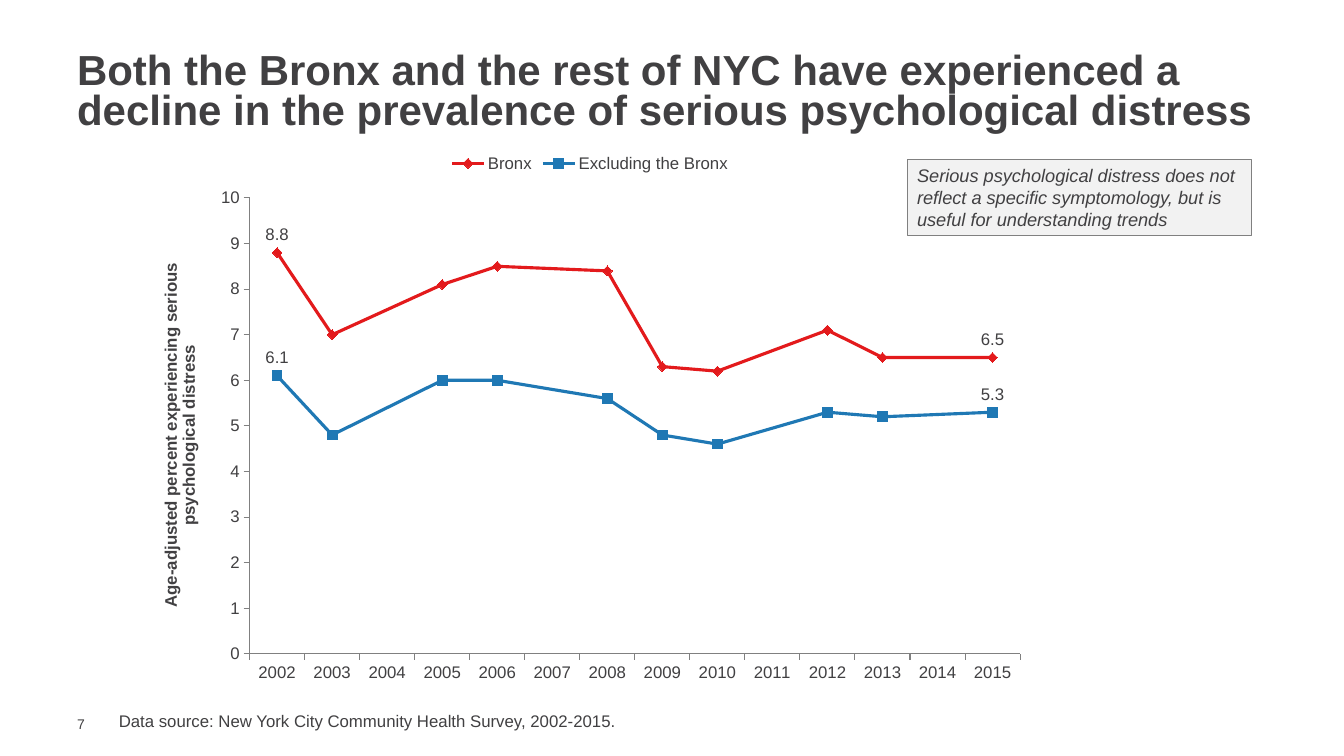
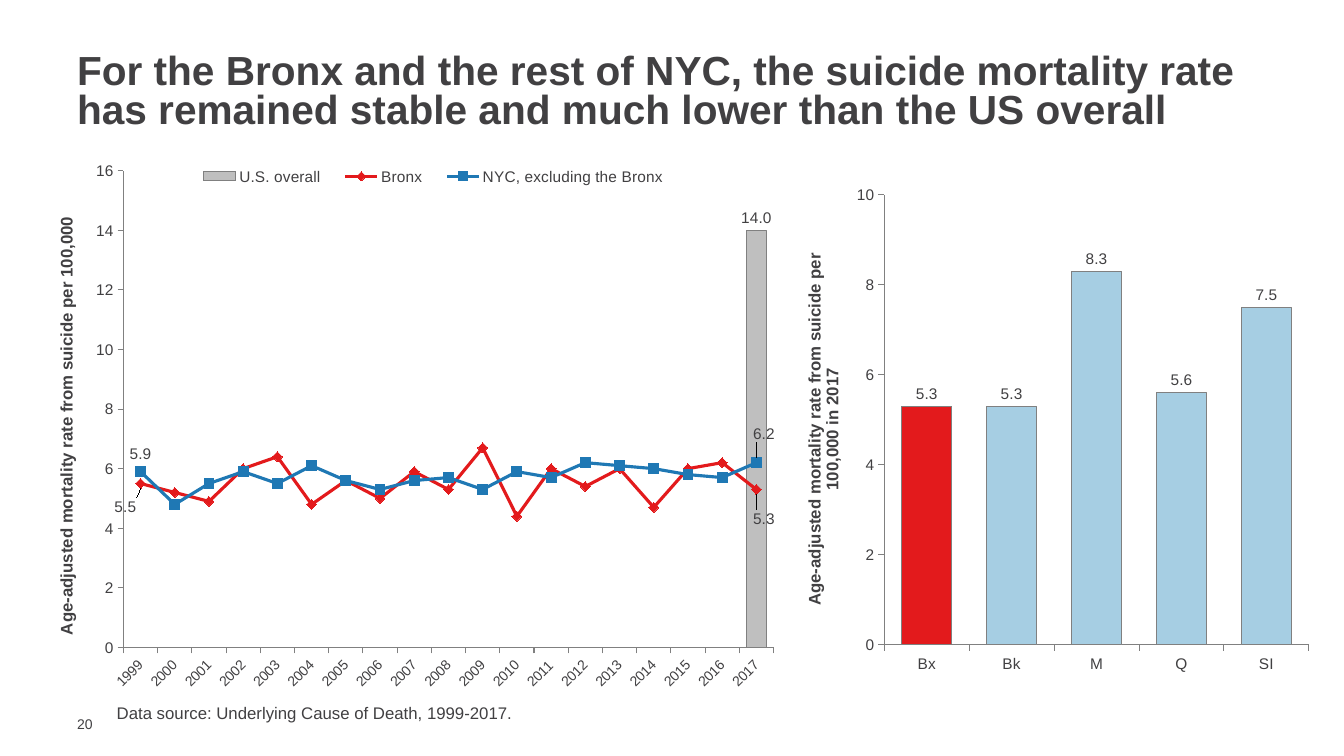
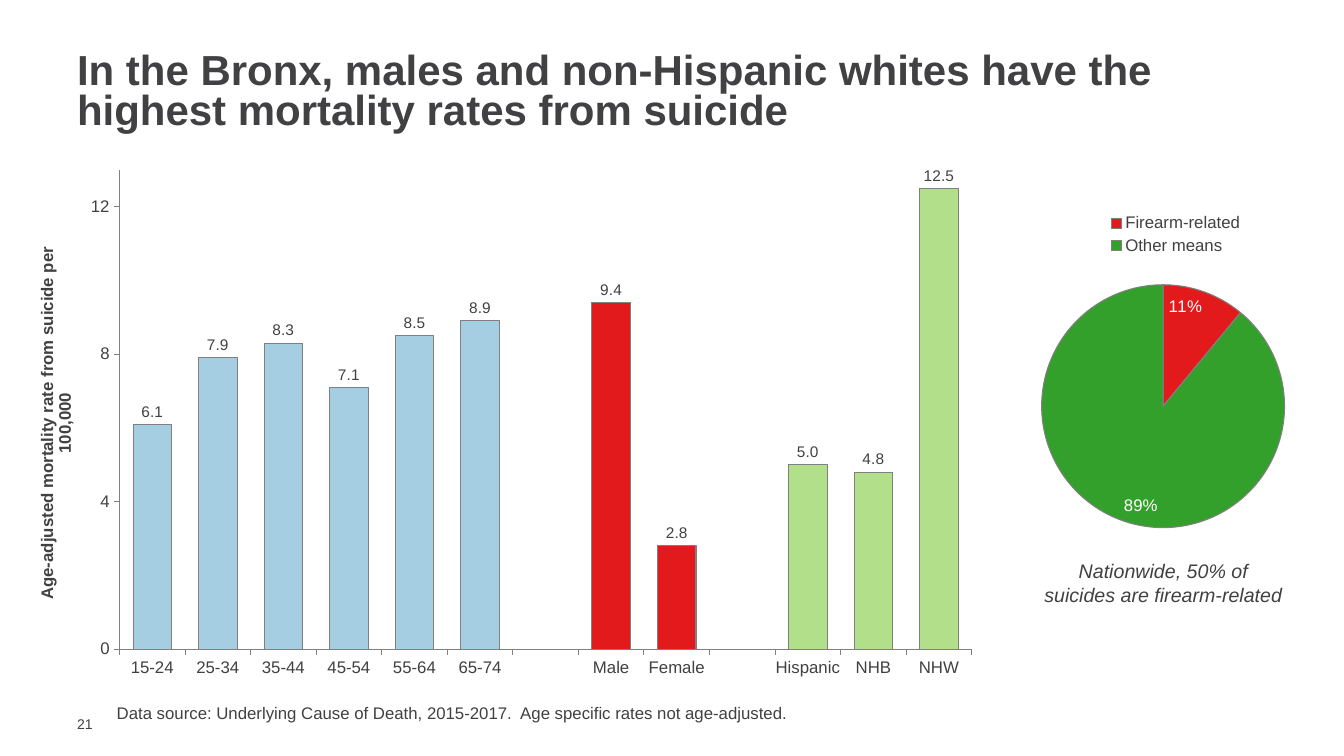
from copy import deepcopy
from dataclasses import dataclass
from typing import NamedTuple

from pptx import Presentation
from pptx.chart.data import CategoryChartData
from pptx.dml.color import RGBColor
from pptx.enum.chart import (XL_CHART_TYPE, XL_LABEL_POSITION, XL_LEGEND_POSITION,
                             XL_MARKER_STYLE, XL_TICK_MARK)
from pptx.enum.shapes import MSO_SHAPE
from pptx.enum.text import MSO_ANCHOR, PP_ALIGN
from pptx.oxml import parse_xml
from pptx.oxml.ns import nsdecls, qn
from pptx.util import Pt

FONT = "Arial"
INK = RGBColor(0x41, 0x40, 0x42)
GRAY = RGBColor(0x80, 0x80, 0x80)
SILVER = RGBColor(0xBF, 0xBF, 0xBF)
PALE_GRAY = RGBColor(0xF2, 0xF2, 0xF2)
WHITE = RGBColor(0xFF, 0xFF, 0xFF)
RED = RGBColor(0xE3, 0x1A, 0x1C)
BLUE = RGBColor(0x1F, 0x78, 0xB4)
LIGHT_BLUE = RGBColor(0xA6, 0xCE, 0xE3)
GREEN = RGBColor(0x33, 0xA0, 0x2C)
LIGHT_GREEN = RGBColor(0xB2, 0xDF, 0x8A)

COLUMNS = XL_CHART_TYPE.COLUMN_CLUSTERED
LINES = XL_CHART_TYPE.LINE_MARKERS
PIE = XL_CHART_TYPE.PIE
ABOVE, BELOW = XL_LABEL_POSITION.ABOVE, XL_LABEL_POSITION.BELOW
OUTSIDE_END, INSIDE_END = XL_LABEL_POSITION.OUTSIDE_END, XL_LABEL_POSITION.INSIDE_END
LEGEND_TOP, LEGEND_RIGHT = XL_LEGEND_POSITION.TOP, XL_LEGEND_POSITION.RIGHT
DIAMOND, SQUARE = XL_MARKER_STYLE.DIAMOND, XL_MARKER_STYLE.SQUARE
TICK_OUT, TICK_NONE = XL_TICK_MARK.OUTSIDE, XL_TICK_MARK.NONE
TOP, MIDDLE = MSO_ANCHOR.TOP, MSO_ANCHOR.MIDDLE
LEFT, CENTER = PP_ALIGN.LEFT, PP_ALIGN.CENTER
RECTANGLE = MSO_SHAPE.RECTANGLE

GAP_WIDTH = 70
RATE_FORMAT = "0.0"


class Box(NamedTuple):
    """Left, top, width and height in points."""
    x: float
    y: float
    w: float
    h: float


class Share(NamedTuple):
    """Left, top, width and height as shares of a chart."""
    x: float
    y: float
    w: float
    h: float


class PointLabel(NamedTuple):
    point: int
    position: XL_LABEL_POSITION
    shift: tuple[float, float] | None = None


class Trend(NamedTuple):
    color: RGBColor
    marker: XL_MARKER_STYLE
    labels: list[PointLabel]


@dataclass
class ValueScale:
    title: str
    top: float
    step: float
    size: float = 12


NUMBER_BOX = Box(48, 511, 31, 12)
TITLE_BOX = Box(48, 34, 864, 65.5)
SOURCE_BOX = Box(76.3, 498.2, 714, 22)


def style_font(font, size: float, color: RGBColor = INK, bold: bool = False,
               italic: bool = False) -> None:
    font.name, font.size, font.bold, font.italic = FONT, Pt(size), bold, italic
    font.color.rgb = color


def write(slide, box: Box, text: str, *, size: float, bold: bool = False,
          italic: bool = False, align: PP_ALIGN = LEFT, anchor: MSO_ANCHOR = TOP,
          spacing: float = 1, insets: tuple[float, ...] = (7.2, 3.6, 7.2, 3.6),
          fill: RGBColor | None = None, line: RGBColor | None = None) -> None:
    frame = [Pt(length) for length in box]
    if fill is None:
        holder = slide.shapes.add_textbox(*frame)
    else:
        holder = slide.shapes.add_shape(RECTANGLE, *frame)
        holder.shadow.inherit = False
        holder.fill.solid()
        holder.fill.fore_color.rgb = fill
        holder.line.color.rgb = line
        holder.line.width = Pt(0.75)
    body = holder.text_frame
    body.word_wrap = True
    body.vertical_anchor = anchor
    body.margin_left, body.margin_top, body.margin_right, body.margin_bottom = map(Pt, insets)
    paragraph = body.paragraphs[0]
    paragraph.alignment = align
    paragraph.line_spacing = spacing
    run = paragraph.add_run()
    run.text = text
    style_font(run.font, size, bold=bold, italic=italic)


def start_slide(deck, number: int, title: str, source: str, title_size: float = 30,
                source_box: Box = SOURCE_BOX):
    """Add a slide with its number, title and data source."""
    slide = deck.slides.add_slide(deck.slide_layouts[6])
    write(slide, NUMBER_BOX, str(number), size=10, anchor=MIDDLE, insets=(7.2, 0, 0, 0))
    write(slide, TITLE_BOX, title, size=title_size, bold=True, anchor=MIDDLE, spacing=0.8)
    write(slide, source_box, f"Data source: {source}", size=12)
    return slide


def layout_xml(**values: float | str):
    settings = "".join(f'<c:{name} val="{value}"/>' for name, value in values.items())
    return parse_xml(f'<c:layout {nsdecls("c")}><c:manualLayout>{settings}'
                     '</c:manualLayout></c:layout>')


def place(part, share: Share, index: int, **target: str) -> None:
    """Give a plot area or legend a fixed place within its chart."""
    for old in part.findall(qn("c:layout")):
        part.remove(old)
    part.insert(index, layout_xml(**target, xMode="edge", yMode="edge", **share._asdict()))


def add_chart(slide, kind: XL_CHART_TYPE, box: Box, plot: Share, categories: list[str],
              series: dict[str, list[float | None]]):
    data = CategoryChartData(number_format=RATE_FORMAT)
    data.categories = categories
    for name, values in series.items():
        data.add_series(name, values)
    chart = slide.shapes.add_chart(kind, *[Pt(length) for length in box], data).chart
    chart.has_title = chart.has_legend = False
    style_font(chart.font, 12)
    place(chart.element.find(f".//{qn('c:plotArea')}"), plot, 0, layoutTarget="inner")
    return chart


def add_legend(chart, position: XL_LEGEND_POSITION, size: float,
               share: Share | None = None) -> None:
    chart.has_legend = True
    chart.legend.position = position
    chart.legend.include_in_layout = False
    style_font(chart.legend.font, size)
    if share:
        place(chart.element.find(f".//{qn('c:legend')}"), share, 1)


def style_axes(chart, scale: ValueScale, category_size: float) -> None:
    values = chart.value_axis
    for axis, size in ((chart.category_axis, category_size), (values, scale.size)):
        axis.has_major_gridlines = False
        axis.major_tick_mark, axis.minor_tick_mark = TICK_OUT, TICK_NONE
        axis.format.line.color.rgb = GRAY
        axis.format.line.width = Pt(0.75)
        style_font(axis.tick_labels.font, size)
    values.tick_labels.number_format = "General"
    values.tick_labels.number_format_is_linked = False
    values.minimum_scale, values.maximum_scale = 0, scale.top
    values.major_unit = scale.step
    title = values.axis_title.text_frame
    title.text = scale.title
    style_font(title.paragraphs[0].runs[0].font, 12, bold=True)


def paint(part, color: RGBColor) -> None:
    part.format.fill.solid()
    part.format.fill.fore_color.rgb = color
    part.format.line.color.rgb = GRAY
    part.format.line.width = Pt(0.75)


def style_columns(plot, color: RGBColor, accents: dict[int, RGBColor]) -> None:
    plot.gap_width = GAP_WIDTH
    plot.vary_by_categories = False
    columns = plot.series[0]
    columns.invert_if_negative = False
    paint(columns, color)
    for index, accent in accents.items():
        paint(columns.points[index], accent)


def label_all(series, size: float, position: XL_LABEL_POSITION, color: RGBColor = INK,
              percent: bool = False) -> None:
    labels = series.data_labels
    labels.show_value, labels.show_percentage = not percent, percent
    labels.number_format = "0%" if percent else RATE_FORMAT
    labels.number_format_is_linked = False
    labels.position = position
    style_font(labels.font, size, color)


def label_points(series, labels: list[PointLabel], size: float) -> None:
    series.data_labels.show_value = False
    series.data_labels.number_format = RATE_FORMAT
    series.data_labels.number_format_is_linked = False
    for spot in labels:
        label = series.points[spot.point].data_label
        style_font(label.font, size)
        label.position = spot.position
        if spot.shift:
            index = series.data_labels._element.find(
                f"{qn('c:dLbl')}/{qn('c:idx')}[@val='{spot.point}']")
            index.addnext(layout_xml(x=spot.shift[0], y=spot.shift[1]))
    if any(spot.shift for spot in labels):
        series.data_labels._element.append(parse_xml(
            f'<c:extLst {nsdecls("c")}><c:ext uri="{{CE6537A1-D6FC-4f65-9D91-7224C49458BB}}" '
            'xmlns:c15="http://schemas.microsoft.com/office/drawing/2012/chart">'
            '<c15:showLeaderLines val="1"/></c:ext></c:extLst>'))


def style_trends(plot, trends: list[Trend], label_size: float) -> None:
    plot.vary_by_categories = False
    for series, trend in zip(plot.series, trends):
        series.smooth = False
        series.format.line.color.rgb = trend.color
        series.format.line.width = Pt(2.25)
        series.marker.style = trend.marker
        series.marker.size = 7
        series.marker.format.fill.solid()
        series.marker.format.fill.fore_color.rgb = trend.color
        series.marker.format.line.color.rgb = trend.color
        label_points(series, trend.labels, label_size)


def turn_into_lines(chart) -> None:
    """Move every series but the first to a line plot on the same axes."""
    columns = chart.element.find(f".//{qn('c:barChart')}")
    lines = parse_xml(f'<c:lineChart {nsdecls("c")}><c:grouping val="standard"/>'
                      '<c:varyColors val="0"/></c:lineChart>')
    for series in columns.findall(qn("c:ser"))[1:]:
        for column_setting in series.findall(qn("c:invertIfNegative")):
            series.remove(column_setting)
        lines.append(series)
    lines.append(parse_xml(f'<c:marker {nsdecls("c")} val="1"/>'))
    for axis_id in columns.findall(qn("c:axId")):
        lines.append(deepcopy(axis_id))
    columns.addnext(lines)


def build_distress(deck) -> None:
    slide = start_slide(
        deck, 7, "Both the Bronx and the rest of NYC have experienced a decline in the "
        "prevalence of serious psychological distress",
        "New York City Community Health Survey, 2002-2015.",
        source_box=Box(77.8, 504, 714, 22))
    chart = add_chart(
        slide, LINES, Box(101.5, 102.2, 640, 392.4), Share(0.12, 0.1, 0.86, 0.83),
        [str(year) for year in range(2002, 2016)],
        {"Bronx": [8.8, 7, None, 8.1, 8.5, None, 8.4, 6.3, 6.2, None, 7.1, 6.5, None, 6.5],
         "Excluding the Bronx": [6.1, 4.8, None, 6, 6, None, 5.6, 4.8, 4.6, None, 5.3, 5.2,
                                 None, 5.3]})
    chart.element.find(f".//{qn('c:dispBlanksAs')}").set("val", "span")
    style_axes(chart, ValueScale(
        "Age-adjusted percent experiencing serious psychological distress", 10, 1), 12)
    add_legend(chart, LEGEND_TOP, 12)
    ends = [PointLabel(0, ABOVE), PointLabel(13, ABOVE)]
    style_trends(chart.plots[0], [Trend(RED, DIAMOND, ends), Trend(BLUE, SQUARE, ends)], 12)
    write(slide, Box(648, 113.8, 246, 54.7),
          "Serious psychological distress does not reflect a specific symptomology, but is "
          "useful for understanding trends",
          size=13, italic=True, fill=PALE_GRAY, line=GRAY)


def build_suicide_trend(deck) -> None:
    slide = start_slide(
        deck, 20, "For the Bronx and the rest of NYC, the suicide mortality rate has remained "
        "stable and much lower than the US overall",
        "Underlying Cause of Death, 1999-2017.", title_size=29)
    boroughs = add_chart(
        slide, COLUMNS, Box(569.5, 128.2, 365.8, 369.4), Share(0.17, 0.03, 0.83, 0.87),
        ["Bx", "Bk", "M", "Q", "SI"], {"Series 1": [5.3, 5.3, 8.3, 5.6, 7.5]})
    style_axes(boroughs, ValueScale(
        "Age-adjusted mortality rate from suicide per 100,000 in 2017", 10, 2, 11), 11)
    style_columns(boroughs.plots[0], LIGHT_BLUE, {0: RED})
    label_all(boroughs.plots[0].series[0], 11, OUTSIDE_END)

    years = [str(year) for year in range(1999, 2018)]
    last = len(years) - 1
    trend = add_chart(
        slide, COLUMNS, Box(18, 102.2, 540, 396), Share(0.13, 0.05, 0.86, 0.86), years,
        {"U.S. overall": [None] * last + [14],
         "Bronx": [5.5, 5.2, 4.9, 6, 6.4, 4.8, 5.6, 5, 5.9, 5.3, 6.7, 4.4, 6, 5.4, 6, 4.7, 6,
                   6.2, 5.3],
         "NYC, excluding the Bronx": [5.9, 4.8, 5.5, 5.9, 5.5, 6.1, 5.6, 5.3, 5.6, 5.7, 5.3,
                                      5.9, 5.7, 6.2, 6.1, 6, 5.8, 5.7, 6.2]})
    turn_into_lines(trend)
    style_axes(trend, ValueScale(
        "Age-adjusted mortality rate from suicide per 100,000", 16, 2, 11), 10)
    year_text = trend.category_axis._element.find(f"{qn('c:txPr')}/{qn('a:bodyPr')}")
    year_text.set("rot", "-2700000")
    add_legend(trend, LEGEND_TOP, 11, Share(0.21, 0.03, 0.66, 0.06))
    overall, cities = trend.plots
    style_columns(overall, SILVER, {})
    label_points(overall.series[0], [PointLabel(last, OUTSIDE_END)], 11)
    style_trends(cities, [
        Trend(RED, DIAMOND, [PointLabel(0, BELOW, (-0.02, 0.01)),
                             PointLabel(last, BELOW, (0.01, 0.02))]),
        Trend(BLUE, SQUARE, [PointLabel(0, ABOVE), PointLabel(last, ABOVE, (0.01, -0.02))]),
    ], 11)


def build_suicide_groups(deck) -> None:
    slide = start_slide(
        deck, 21, "In the Bronx, males and non-Hispanic whites have the highest mortality "
        "rates from suicide",
        "Underlying Cause of Death, 2015-2017.  Age specific rates not age-adjusted.")
    groups = add_chart(
        slide, COLUMNS, Box(23.8, 113.8, 684, 372.2), Share(0.09, 0.02, 0.89, 0.92),
        ["15-24", "25-34", "35-44", "45-54", "55-64", "65-74", "", "Male", "Female", "",
         "Hispanic", "NHB", "NHW"],
        {"Series 1": [6.1, 7.9, 8.3, 7.1, 8.5, 8.9, None, 9.4, 2.8, None, 5, 4.8, 12.5]})
    style_axes(groups, ValueScale(
        "Age-adjusted mortality rate from suicide per 100,000", 13, 4), 12)
    style_columns(groups.plots[0], LIGHT_BLUE,
                  {7: RED, 8: RED, 10: LIGHT_GREEN, 11: LIGHT_GREEN, 12: LIGHT_GREEN})
    label_all(groups.plots[0].series[0], 11, OUTSIDE_END)

    means = add_chart(
        slide, PIE, Box(725.8, 126, 200, 267), Share(0.09, 0.29, 0.87, 0.65),
        ["Firearm-related", "Other means"], {"Series 1": [11, 89]})
    add_legend(means, LEGEND_RIGHT, 12, Share(0.27, 0.09, 0.6, 0.13))
    slices = means.plots[0].series[0]
    for index, color in enumerate((RED, GREEN)):
        paint(slices.points[index], color)
    label_all(slices, 12, INSIDE_END, WHITE, percent=True)
    write(slide, Box(738, 396, 186, 41), "Nationwide, 50% of suicides are firearm-related",
          size=14, italic=True, align=CENTER)


def main() -> None:
    deck = Presentation()
    deck.slide_width, deck.slide_height = Pt(960), Pt(540)
    build_distress(deck)
    build_suicide_trend(deck)
    build_suicide_groups(deck)
    deck.save("out.pptx")


if __name__ == "__main__":
    main()
